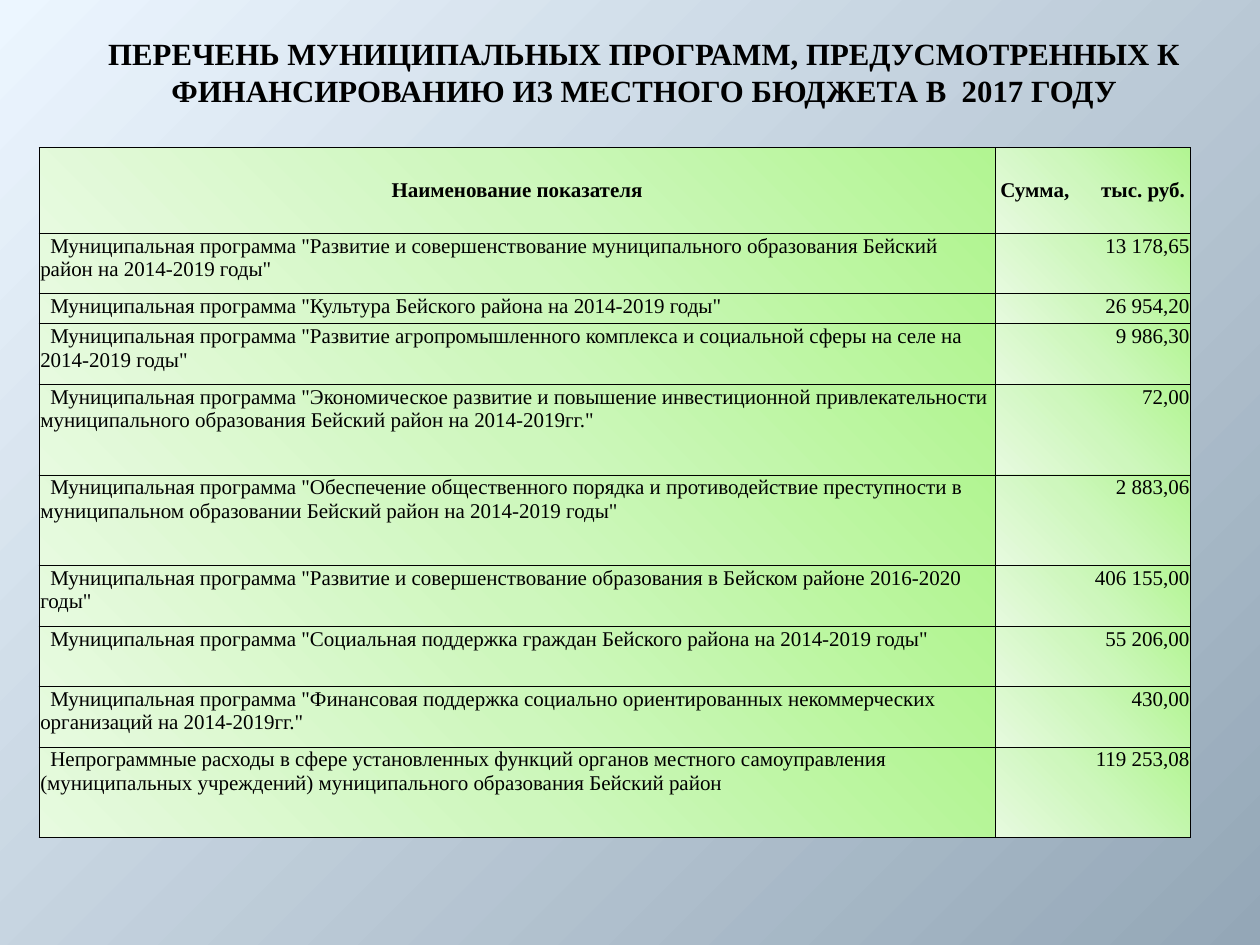
from pptx import Presentation
from pptx import util as u
from pptx.dml.color import RGBColor
from pptx.enum import text
from pptx.oxml import parse_xml
from pptx.oxml.ns import nsdecls

Inches, Pt = u.Inches, u.Pt
FONT = "Times New Roman"
COLORS = {
    "ink": "000000",
    "sky_light": "ECF6FF", "sky_dark": "94A7B7",
    "green": "B2F592", "green_mid": "CEF7BD", "green_pale": "E7FADF",
}
TITLE = ("ПЕРЕЧЕНЬ МУНИЦИПАЛЬНЫХ ПРОГРАММ, ПРЕДУСМОТРЕННЫХ К "
         "ФИНАНСИРОВАНИЮ ИЗ МЕСТНОГО БЮДЖЕТА В  2017 ГОДУ")
HEADER = ("Наименование показателя", "Сумма,\tтыс. руб.")
COLUMN_WIDTHS = (7.59, 1.55)
HEADER_HEIGHT = 0.68
LINE_HEIGHT = 0.24
# Name, amount, row height in lines
PROGRAMS = [
    ('Муниципальная программа "Развитие и совершенствование муниципального '
     'образования Бейский район на 2014-2019 годы"', "13 178,65", 2),
    ('Муниципальная программа "Культура Бейского района на 2014-2019 годы"',
     "26 954,20", 1),
    ('Муниципальная программа "Развитие агропромышленного комплекса и '
     'социальной сферы на селе на 2014-2019 годы"', "9 986,30", 2),
    ('Муниципальная программа "Экономическое развитие и повышение '
     'инвестиционной привлекательности муниципального образования Бейский '
     'район на 2014-2019гг."', "72,00", 3),
    ('Муниципальная программа "Обеспечение общественного порядка и '
     'противодействие преступности в муниципальном образовании Бейский район '
     'на 2014-2019 годы"', "2 883,06", 3),
    ('Муниципальная программа "Развитие и совершенствование образования в '
     'Бейском районе 2016-2020 годы"', "406 155,00", 2),
    ('Муниципальная программа "Социальная поддержка граждан Бейского района '
     'на 2014-2019 годы"', "55 206,00", 2),
    ('Муниципальная программа "Финансовая поддержка социально ориентированных '
     'некоммерческих организаций на 2014-2019гг."', "430,00", 2),
    ('Непрограммные расходы в сфере установленных функций органов местного '
     'самоуправления (муниципальных учреждений) муниципального образования '
     'Бейский район', "119 253,08", 3),
]


def corner_gradient(names, left, right):
    """Radial gradient that starts at a top corner; left and right in percent."""
    last = len(names) - 1
    stops = "".join(
        f'<a:gs pos="{100000 * i // last}"><a:srgbClr val="{COLORS[name]}"/></a:gs>'
        for i, name in enumerate(names))
    return parse_xml(
        f'<a:gradFill {nsdecls("a")} rotWithShape="1"><a:gsLst>{stops}</a:gsLst>'
        f'<a:path path="circle"><a:fillToRect l="{left * 1000}" t="0" '
        f'r="{right * 1000}" b="100000"/></a:path></a:gradFill>')


def replace_solid(parent, gradient):
    solid = parent.find(".//" + "{http://schemas.openxmlformats.org/drawingml/2006/main}solidFill")
    solid.getparent().replace(solid, gradient)


def set_background(page):
    page.background.fill.solid()
    replace_solid(page.background._cSld, corner_gradient(("sky_light", "sky_dark"), 0, 100))


def set_font(para, size, bold):
    font = para.font
    font.name, font.size, font.bold = FONT, Pt(size), bold
    font.color.rgb = RGBColor.from_string(COLORS["ink"])


def add_title(page):
    box = page.shapes.add_textbox(Inches(0.78), Inches(0.23), Inches(8.67), Inches(0.63))
    frame = box.text_frame
    frame.word_wrap = True
    frame.vertical_anchor = text.MSO_ANCHOR.BOTTOM
    frame.margin_left = frame.margin_right = Inches(0.05)
    frame.margin_top = frame.margin_bottom = 0
    para = frame.paragraphs[0]
    para.text = TITLE
    para.alignment = text.PP_ALIGN.CENTER
    set_font(para, 17.6, True)


def style_cell(cell):
    cell.margin_left = cell.margin_right = cell.margin_top = Inches(0.01)
    cell.margin_bottom = 0
    cell.fill.solid()
    properties = cell._tc.get_or_add_tcPr()
    replace_solid(properties, corner_gradient(("green", "green_mid", "green_pale"), 100, 0))
    for i, side in enumerate(("lnL", "lnR", "lnT", "lnB")):
        properties.insert(i, parse_xml(
            f'<a:{side} {nsdecls("a")} w="{Pt(0.5)}"><a:solidFill>'
            f'<a:srgbClr val="{COLORS["ink"]}"/></a:solidFill></a:{side}>'))


def fill_cell(cell, content, alignment, bold=False):
    style_cell(cell)
    para = cell.text_frame.paragraphs[0]
    para.text = content
    para.alignment = alignment
    set_font(para, 12, bold)
    return para


def add_header(table):
    name, amount = table.cell(0, 0), table.cell(0, 1)
    fill_cell(name, HEADER[0], text.PP_ALIGN.CENTER, True)
    para = fill_cell(amount, HEADER[1], text.PP_ALIGN.LEFT, True)
    amount.margin_left = Inches(0.04)
    para._p.get_or_add_pPr().insert(0, parse_xml(
        f'<a:tabLst {nsdecls("a")}><a:tab pos="{Inches(0.8)}" algn="l"/></a:tabLst>'))
    for cell in (name, amount):
        cell.vertical_anchor = text.MSO_ANCHOR.MIDDLE


def add_program_table(page):
    heights = [HEADER_HEIGHT] + [LINE_HEIGHT * lines for _, _, lines in PROGRAMS]
    table = page.shapes.add_table(
        len(heights), len(COLUMN_WIDTHS), Inches(0.31), Inches(1.17),
        Inches(sum(COLUMN_WIDTHS)), Inches(sum(heights))).table
    for column, width in zip(table.columns, COLUMN_WIDTHS):
        column.width = Inches(width)
    for row, height in zip(table.rows, heights):
        row.height = Inches(height)
    add_header(table)
    for i, (name, amount, _) in enumerate(PROGRAMS, start=1):
        para = fill_cell(table.cell(i, 0), name, text.PP_ALIGN.LEFT)
        para._p.get_or_add_pPr().set("indent", str(Inches(0.08)))
        fill_cell(table.cell(i, 1), amount, text.PP_ALIGN.RIGHT)


def main():
    deck = Presentation()
    deck.slide_width, deck.slide_height = Inches(10), Inches(7.5)
    page = deck.slides.add_slide(deck.slide_layouts[6])
    set_background(page)
    add_title(page)
    add_program_table(page)
    deck.save("out.pptx")


if __name__ == "__main__":
    main()
